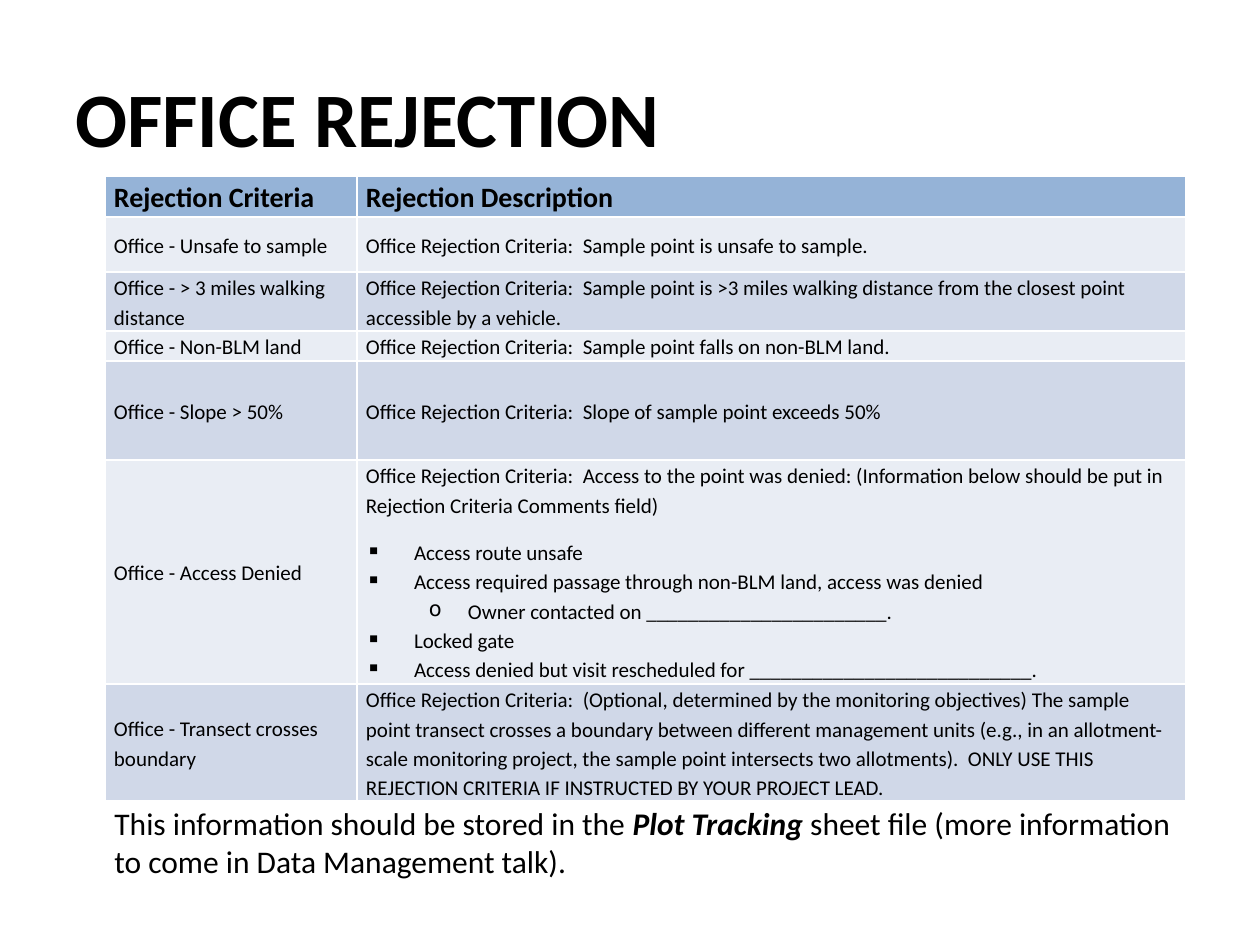
"""Build the office rejection slide with its criteria table."""
import pptx
import pptx.dml.color
import pptx.enum.text
import pptx.oxml
import pptx.oxml.ns
import pptx.util
from lxml import etree

EMU = 914400 / 126
MID = pptx.enum.text.MSO_ANCHOR.MIDDLE


def px(n):
    return pptx.util.Emu(round(n * EMU))


def style(run, size, bold=False, italic=False, hue="000000"):
    font = run.font
    font.name, font.size = "Calibri", pptx.util.Pt(size)
    font.bold, font.italic = bold, italic
    font.color.rgb = pptx.dml.color.RGBColor.from_string(hue)


LEAD = "Office Rejection Criteria:  "
ROWS = [
    (41, "Rejection Criteria", ["Rejection Description"]),
    (55, "Office - Unsafe to sample", [LEAD + "Sample point is unsafe to sample."]),
    (59, "Office - > 3 miles walking distance",
     [LEAD + "Sample point is >3 miles walking distance from the closest point "
      "accessible by a vehicle."]),
    (30, "Office - Non-BLM land", [LEAD + "Sample point falls on non-BLM land."]),
    (99, "Office - Slope > 50%", [LEAD + "Slope of sample point exceeds 50%"]),
    (224, "Office - Access Denied",
     [LEAD + "Access to the point was denied: (Information below should be put in "
      "Rejection Criteria Comments field)",
      "▪Access route unsafe",
      "▪Access required passage through non-BLM land, access was denied",
      "oOwner contacted on " + "_" * 23 + ".",
      "▪Locked gate",
      "▪Access denied but visit rescheduled for " + "_" * 27 + "."]),
    (117, "Office - Transect crosses boundary",
     [LEAD + "(Optional, determined by the monitoring objectives) The sample point "
      "transect crosses a boundary between different management units (e.g., in an "
      "allotment-scale monitoring project, the sample point intersects two "
      "allotments).  ONLY USE THIS REJECTION CRITERIA IF INSTRUCTED BY YOUR "
      "PROJECT LEAD."]),
]
INDENT = {"▪": (48, -48), "o": (102, -39)}

deck = pptx.Presentation()
deck.slide_width, deck.slide_height = px(1260), px(945)
slide = deck.slides.add_slide(deck.slide_layouts[6])

title = slide.shapes.add_textbox(px(63), px(38), px(1134), px(157)).text_frame
title.word_wrap = True
title.vertical_anchor = MID
title.text = "OFFICE REJECTION"
style(title.paragraphs[0].runs[0], 44, True)

high = sum(row[0] for row in ROWS)
grid = slide.shapes.add_table(len(ROWS), 2, px(105), px(176), px(1081), px(high)).table
for col, wide in zip(grid.columns, (252, 829)):
    col.width = px(wide)

for i, (tall, name, lines) in enumerate(ROWS):
    grid.rows[i].height = px(tall)
    fill = "95B3D7" if i == 0 else ("D0D8E8", "E9EDF4")[i % 2]
    for j, texts in enumerate(([name], lines)):
        cell = grid.cell(i, j)
        cell.margin_left = cell.margin_right = px(9)
        cell.margin_top = cell.margin_bottom = 0
        if i:
            cell.vertical_anchor = MID
        props = cell._tc.get_or_add_tcPr()
        for side in "LRTB":
            props.append(pptx.oxml.parse_xml(
                f'<a:ln{side} {pptx.oxml.ns.nsdecls("a")} w="12700"><a:solidFill>'
                f'<a:srgbClr val="FFFFFF"/></a:solidFill></a:ln{side}>'))
        cell.fill.solid()
        cell.fill.fore_color.rgb = pptx.dml.color.RGBColor.from_string(fill)
        for k, text in enumerate(texts):
            frame = cell.text_frame
            para = frame.add_paragraph() if k else frame.paragraphs[0]
            para.text = text[1:] if k else text
            para.line_spacing = 1.15
            para.space_after = pptx.util.Pt(0 if k else 10)
            style(para.runs[0], 12 if i else 16, i == 0)
            if k:
                mark = text[0]
                left, hang = INDENT[mark]
                para.level = 1 if mark == "o" else 0
                pr = para._p.get_or_add_pPr()
                pr.set("marL", str(px(left)))
                pr.set("indent", str(px(hang)))
                etree.SubElement(pr, pptx.oxml.ns.qn("a:buChar"), char=mark)

note = slide.shapes.add_textbox(px(102), px(798), px(1102), px(127)).text_frame
note.word_wrap = True
for text, strong in (
    ("This information should be stored in the ", False),
    ("Plot Tracking ", True),
    ("sheet file (more information to come in Data Management talk).", False),
):
    run = note.paragraphs[0].add_run()
    run.text = text
    style(run, 18, strong, strong)

deck.save("out.pptx")
